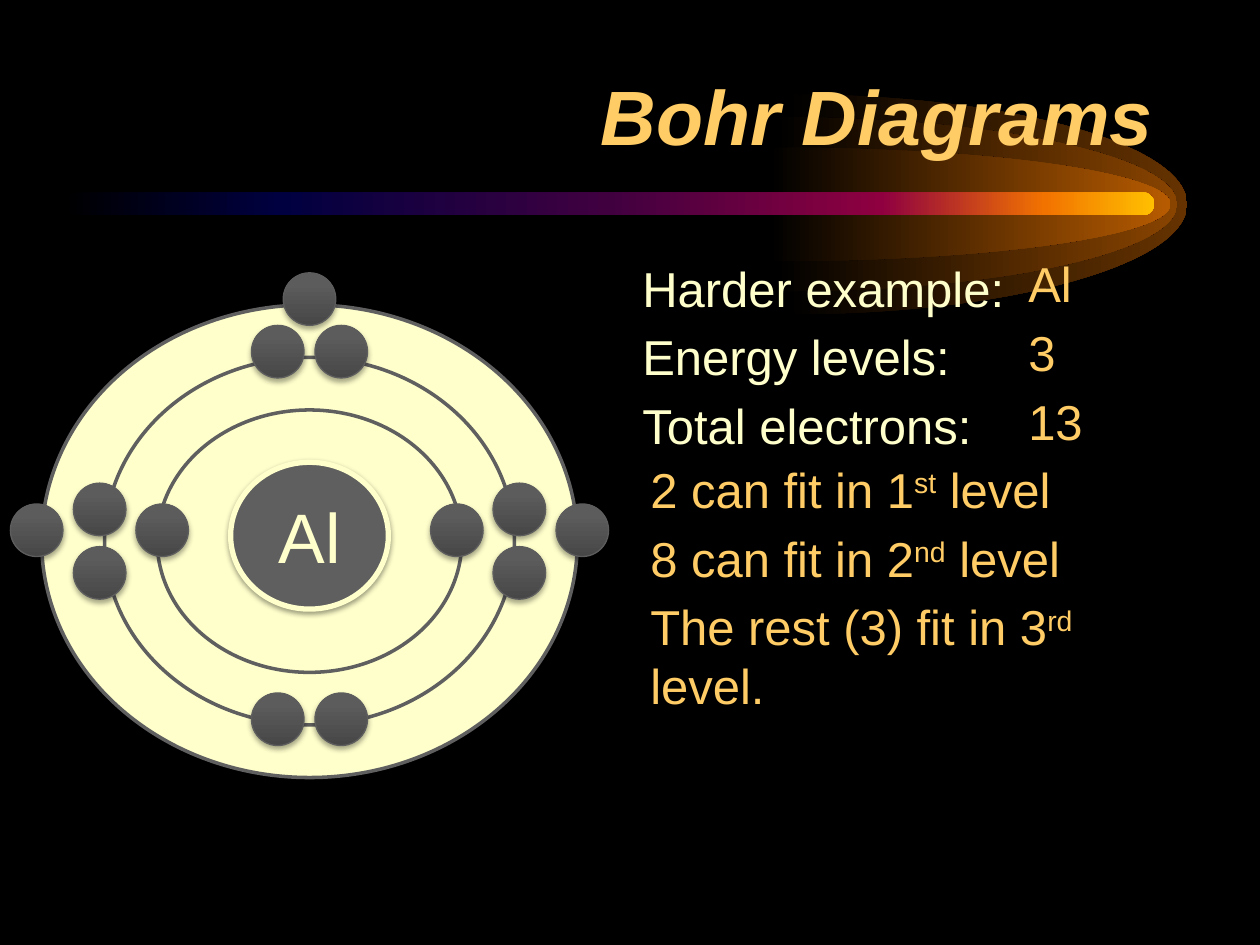
from lxml import etree
from pptx import Presentation
from pptx.dml.color import RGBColor
from pptx.enum.shapes import MSO_SHAPE
from pptx.enum.text import MSO_ANCHOR, PP_ALIGN
from pptx.oxml.ns import qn
from pptx.util import Cm, Pt

OVAL = MSO_SHAPE.OVAL
ROUNDED = MSO_SHAPE.ROUNDED_RECTANGLE
TOP, MIDDLE, BOTTOM = MSO_ANCHOR.TOP, MSO_ANCHOR.MIDDLE, MSO_ANCHOR.BOTTOM
LEFT, CENTER, RIGHT = PP_ALIGN.LEFT, PP_ALIGN.CENTER, PP_ALIGN.RIGHT

COLORS = {
    "black": "000000",
    "cream": "FFFFCC",
    "gold": "FFCC66",
    "gray": "5F5F5F",
    "electron_edge": "5D5D5D",
    "electron_dark": "474747",
    "electron_light": "5C5C5C",
    "glow_outer": "663300",
    "glow_middle": "894400",
    "glow_inner": "B75B00",
    "navy": "000040",
    "purple": "400040",
    "crimson": "8F0040",
    "orange": "F27300",
    "yellow": "FFBF00",
}


class BohrSlide:
    font_name = "Arial"

    def __init__(self, presentation):
        self.slide = presentation.slides.add_slide(presentation.slide_layouts[6])
        background = self.slide.background.fill
        background.solid()
        background.fore_color.rgb = self.color("black")

    def color(self, name):
        return RGBColor.from_string(COLORS[name])

    def fill_gradient(self, shape, stops, angle=0):
        shape.fill.gradient()
        shape.fill.gradient_angle = angle
        stop_list = shape.fill._fill._gradFill.find(qn("a:gsLst"))
        for stop in list(stop_list):
            stop_list.remove(stop)
        for position, name in stops:
            stop = etree.SubElement(stop_list, qn("a:gs"), pos=str(position * 1000))
            etree.SubElement(stop, qn("a:srgbClr"), val=COLORS[name])

    def add_shadow(self, shape, opacity, distance):
        effects = shape._element.spPr.find(qn("a:effectLst"))
        shadow = etree.SubElement(
            effects, qn("a:outerShdw"), blurRad=str(Pt(3.1)), dist=str(Pt(distance)),
            dir="5400000", rotWithShape="0")
        shade = etree.SubElement(shadow, qn("a:srgbClr"), val=COLORS["black"])
        etree.SubElement(shade, qn("a:alpha"), val=str(opacity * 1000))

    def add_glow(self, left, center_y, width, half_height, name):
        top, bottom = center_y - half_height, center_y + half_height
        builder = self.slide.shapes.build_freeform(Cm(left), Cm(top))
        builder.add_line_segments(
            [(Cm(left + width), Cm(center_y)), (Cm(left), Cm(bottom))], close=True)
        shape = builder.convert_to_shape()
        quarter_arcs = [
            [(0.55, 0), (1, 0.45), (1, 1)],
            [(1, 1.55), (0.55, 2), (0, 2)],
        ]
        segments = list(shape._element.iter(qn("a:lnTo")))
        for segment, arc in zip(segments, quarter_arcs):
            curve = etree.Element(qn("a:cubicBezTo"))
            for x, y in arc:
                etree.SubElement(curve, qn("a:pt"), x=str(Cm(width * x)),
                                 y=str(Cm(half_height * y)))
            segment.getparent().replace(segment, curve)
        shape.shadow.inherit = False
        shape.line.fill.background()
        self.fill_gradient(shape, [(0, "black"), (100, name)])

    def add_bar(self, left, top, width, height, stops):
        shape = self.slide.shapes.add_shape(
            ROUNDED, Cm(left), Cm(top), Cm(width), Cm(height))
        shape.adjustments[0] = 0.5
        shape.shadow.inherit = False
        shape.line.fill.background()
        self.fill_gradient(shape, stops)

    def add_oval(self, center_x, center_y, width, height, fill, line, line_width):
        shape = self.slide.shapes.add_shape(
            OVAL, Cm(center_x - width / 2), Cm(center_y - height / 2),
            Cm(width), Cm(height))
        shape.shadow.inherit = False
        shape.fill.solid()
        shape.fill.fore_color.rgb = self.color(fill)
        shape.line.color.rgb = self.color(line)
        shape.line.width = Pt(line_width)
        return shape

    def add_nucleus(self, center_x, center_y, symbol):
        shape = self.add_oval(center_x, center_y, 3.18, 2.96, "gray", "cream", 3)
        self.add_shadow(shape, 38, 1.6)
        shape.text_frame.text = symbol
        shape.text_frame.vertical_anchor = MIDDLE
        paragraph = shape.text_frame.paragraphs[0]
        paragraph.alignment = CENTER
        self.format_run(paragraph.runs[0], 40, "cream")

    def add_electron(self, center_x, center_y):
        shape = self.add_oval(
            center_x, center_y, 1.06, 1.06, "electron_light", "electron_edge", 0.75)
        stops = [(0, "electron_dark"), (80, "electron_light"), (100, "electron_light")]
        self.fill_gradient(shape, stops, 90)
        self.add_shadow(shape, 35, 1.8)

    def format_run(self, run, size, color, bold=False):
        run.font.name = self.font_name
        run.font.size = Pt(size)
        run.font.bold = run.font.italic = bold
        run.font.color.rgb = self.color(color)

    def add_text_box(self, left, top, width, height, anchor=TOP):
        frame = self.slide.shapes.add_textbox(
            Cm(left), Cm(top), Cm(width), Cm(height)).text_frame
        frame.word_wrap = True
        frame.vertical_anchor = anchor
        return frame

    def add_title(self, text):
        frame = self.add_text_box(1.9, 0.97, 21.6, 2.39, BOTTOM)
        frame.text = text
        paragraph = frame.paragraphs[0]
        paragraph.alignment = RIGHT
        self.format_run(paragraph.runs[0], 44, "gold", bold=True)

    def add_lines(self, left, top, lines, color):
        frame = self.add_text_box(left, top, 11.23, 10.36)
        frame.text = "\n".join(parts[0] for _, parts in lines)
        for paragraph, (indent, parts) in zip(frame.paragraphs, lines):
            paragraph.alignment = LEFT
            for part in parts[1:]:
                paragraph.add_run().text = part
            properties = paragraph._p.get_or_add_pPr()
            properties.set("marL", str(Cm(indent)))
            spacing = etree.SubElement(properties, qn("a:spcBef"))
            etree.SubElement(spacing, qn("a:spcPct"), val="20000")
            for position, run in enumerate(paragraph.runs):
                self.format_run(run, 28, color)
                if position == 1:
                    run._r.get_or_add_rPr().set("baseline", "30000")


def main():
    presentation = Presentation()
    presentation.slide_width = Cm(25.4)
    presentation.slide_height = Cm(19.05)
    slide = BohrSlide(presentation)

    for left, half_height, name in [(15.85, 2.22, "glow_outer"),
                                    (15.65, 1.76, "glow_middle"),
                                    (15.52, 1.15, "glow_inner")]:
        slide.add_glow(left, 4.12, 8.08, half_height, name)
    slide.add_bar(1.27, 3.88, 22, 0.46, [
        (0, "black"), (20, "navy"), (50, "purple"),
        (75, "crimson"), (90, "orange"), (100, "yellow")])

    center_x, ring_y, electron_y = 6.24, 10.91, 10.69
    for width, height in [(10.8, 9.53), (8.26, 7.41), (6.14, 5.29)]:
        slide.add_oval(center_x, ring_y, width, height, "cream", "gray", 2)

    slide.add_title("Bohr Diagrams")
    slide.add_lines(12.7, 5.08, [
        (0, ["Harder example:"]),
        (0, ["Energy levels:"]),
        (0, ["Total electrons:"])], "cream")

    slide.add_nucleus(center_x, 10.8, "Al")
    pair = (-0.64, 0.64)
    first_level = [(x, electron_y) for x in (-2.97, 2.97)]
    second_level = [(x, ring_y + y) for x in (-4.23, 4.23) for y in pair]
    second_level += [(x, y) for y in (7.09, 14.5) for x in pair]
    third_level = [(-5.5, electron_y), (5.5, electron_y), (0, 6.03)]
    for x, y in first_level + second_level + third_level:
        slide.add_electron(center_x + x, y)

    slide.add_lines(12.86, 4.99, [
        (7.62, ["Al"]),
        (7.62, ["3"]),
        (7.62, ["13"]),
        (0, ["2 can fit in 1", "st", " level"]),
        (0, ["8 can fit in 2", "nd", " level"]),
        (0, ["The rest (3) fit in 3", "rd", " level."])], "gold")

    presentation.save("out.pptx")


if __name__ == "__main__":
    main()
